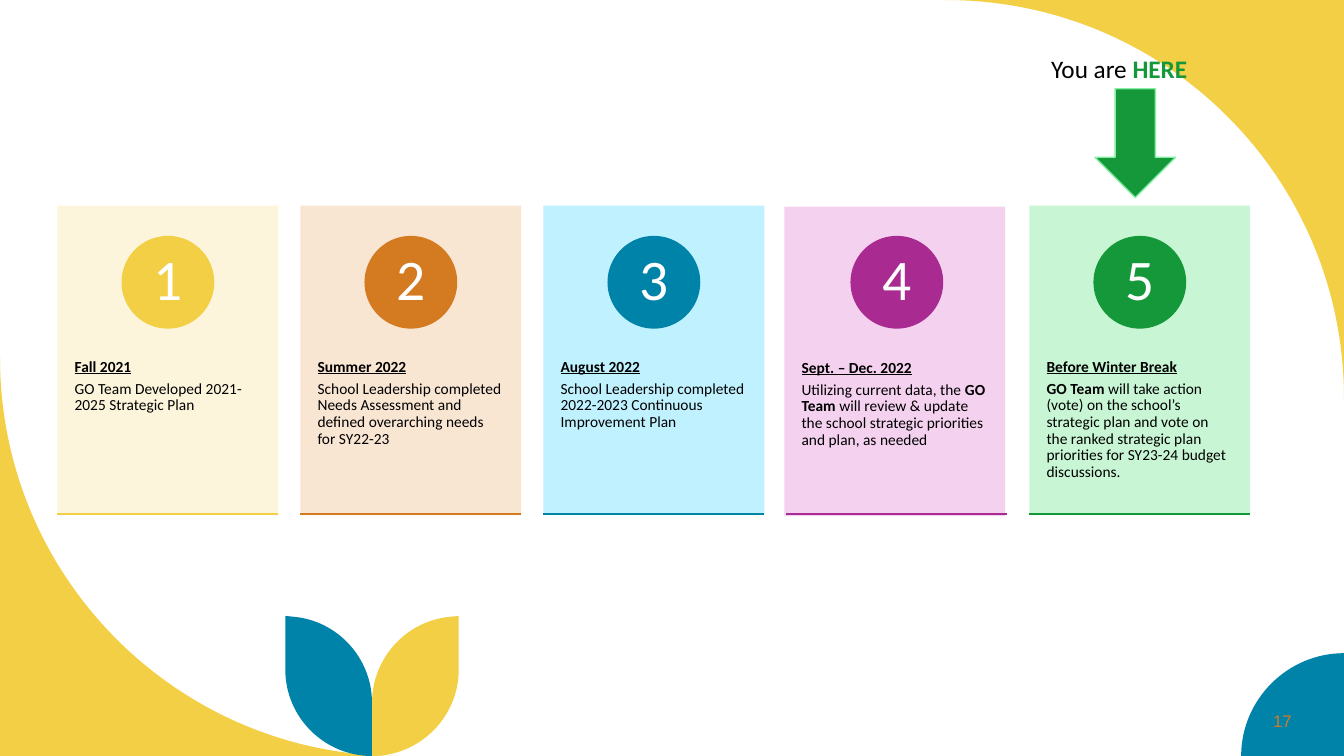
import pptx
import pptx.dml.color
import pptx.enum.shapes
import pptx.enum.text
import pptx.oxml
import pptx.oxml.ns
import pptx.util

Inches, Pt = pptx.util.Inches, pptx.util.Pt
SHAPE = pptx.enum.shapes.MSO_SHAPE
ALIGN = pptx.enum.text.PP_ALIGN
ANCHOR = pptx.enum.text.MSO_ANCHOR
AUTO_SIZE = pptx.enum.text.MSO_AUTO_SIZE
qn, nsdecls = pptx.oxml.ns.qn, pptx.oxml.ns.nsdecls

# Content: date, [(text, bold)], panel, circle and rule colours, panel shift
STEPS = [
    ("Fall 2021", [("GO Team Developed 2021-2025 Strategic Plan", False)],
     "FCF5D8", "F3CF45", "F3CF45", (0, 0)),
    ("Summer 2022",
     [("School Leadership completed Needs Assessment and defined overarching needs for SY22-23", False)],
     "F8E4CF", "D47B22", "D47B22", (0, 0)),
    ("August 2022",
     [("School Leadership completed 2022-2023 Continuous Improvement Plan", False)],
     "BAF0FF", "0083A9", "0083A9", (0, 0)),
    ("Sept. – Dec. 2022",
     [("Utilizing current data, the ", False), ("GO Team ", True),
      ("will review & update the school strategic priorities and plan, as needed", False)],
     "F3CDED", "A92A91", "A92A91", (-0.02, 0.01)),
    ("Before Winter Break",
     [("GO Team ", True),
      ("will take action (vote) on the school’s strategic plan and vote on the ranked "
       "strategic plan priorities for SY23-24 budget discussions.", False)],
     "C3F6D1", "159839", "129836", (0, 0)),
]
YELLOW, BLUE, GREEN = "F3CF45", "0083A9", "159839"
PAGE_NUMBER = "17"

# Layout
W, H = 13.33, 7.5
CARD_X, CARD_Y, CARD_W, CARD_H, PITCH = 0.57, 2.04, 2.19, 3.07, 2.41
TEXT_Y, TEXT_H = 3.2, 1.84
CIRCLE_Y, CIRCLE_D = 2.34, 0.92
RULE_Y = 5.1
STEM_X = 3.69

# Outlines: a 2-tuple is a line end, a 6-tuple is a cubic curve
CORNERS = [
    ([(W, 0), (W, 3.95), (W, 1.77, 11.57, 0, 9.38, 0)], YELLOW),
    ([(0, 3.55), (0, 5.73, 1.77, H, 3.95, H), (0, H)], YELLOW),
    ([(W, H), (W, 6.48), (12.77, 6.48, 12.31, 6.94, 12.31, H)], BLUE),
]
# Leaf outline, with x measured from the stem
LEAF = [(0.86, 6.11), (0.86, 6.64), (0.86, 7.12, 0.47, H, 0, H), (0, 6.97),
        (0, 6.53, 0.34, 6.16, 0.77, 6.12)]


def rgb(value):
    return pptx.dml.color.RGBColor.from_string(value)


def paint(sp, fill, line=None):
    sp.shadow.inherit = False
    sp.fill.solid()
    sp.fill.fore_color.rgb = rgb(fill)
    if line:
        sp.line.color.rgb = rgb(line)
        sp.line.width = Pt(1)
    else:
        sp.line.fill.background()


def add_shape(s, kind, x, y, w, h, fill, line=None):
    sp = s.shapes.add_shape(kind, Inches(x), Inches(y), Inches(w), Inches(h))
    paint(sp, fill, line)
    return sp


def add_text(s, x, y, w, h):
    tf = s.shapes.add_textbox(Inches(x), Inches(y), Inches(w), Inches(h)).text_frame
    tf.word_wrap = True
    tf.auto_size = AUTO_SIZE.NONE
    return tf


def set_margins(tf, side, top):
    tf.margin_left = tf.margin_right = Inches(side)
    tf.margin_top = tf.margin_bottom = Inches(top)


def add_run(p, text, size, color="000000", bold=False, underline=False, font="Calibri"):
    r = p.add_run()
    r.text = text
    r.font.name, r.font.size = font, Pt(size)
    r.font.bold, r.font.underline = bold, underline
    r.font.color.rgb = rgb(color)


def add_outline(s, outline, fill):
    points = [(Inches(part[i]), Inches(part[i + 1]))
              for part in outline for i in range(0, len(part), 2)]
    builder = s.shapes.build_freeform(*points[0])
    builder.add_line_segments(points[1:], close=True)
    sp = builder.convert_to_shape()
    paint(sp, fill)

    # Join each curve's three segments into one cubic
    segments = iter(sp._element.findall(".//" + qn("a:lnTo")))
    for part in outline[1:]:
        group = [next(segments) for _ in range(len(part) // 2)]
        if len(group) == 3:
            curve = pptx.oxml.parse_xml("<a:cubicBezTo %s/>" % nsdecls("a"))
            group[0].addprevious(curve)
            for segment in group:
                curve.append(segment[0])
                segment.getparent().remove(segment)


def mirror(outline, sign):
    return [tuple(STEM_X + sign * v if i % 2 == 0 else v for i, v in enumerate(part))
            for part in outline]


def add_card(s, index, step):
    date, body, panel_color, circle_color, rule_color, (dx, dy) = step
    x = CARD_X + index * PITCH

    # Tinted panel
    panel = add_shape(s, SHAPE.RECTANGLE, x + dx, CARD_Y + dy, CARD_W, CARD_H, panel_color)
    color = panel._element.spPr.find(qn("a:solidFill")).find(qn("a:srgbClr"))
    color.append(pptx.oxml.parse_xml('<a:alpha %s val="90000"/>' % nsdecls("a")))

    # Date and description
    tf = add_text(s, x + dx, TEXT_Y + dy, CARD_W, TEXT_H)
    set_margins(tf, 0.17, 0.36)
    p = tf.paragraphs[0]
    p.line_spacing = 0.9
    add_run(p, date, 11, bold=True, underline=True)
    p = tf.add_paragraph()
    p.line_spacing, p.space_before = 0.9, Pt(3.9)
    for text, bold in body:
        add_run(p, text, 11, bold=bold)

    # Numbered circle
    circle = add_shape(s, SHAPE.OVAL, x + (CARD_W - CIRCLE_D) / 2, CIRCLE_Y,
                       CIRCLE_D, CIRCLE_D, circle_color)
    tf = circle.text_frame
    set_margins(tf, 0.07, 0.01)
    tf.vertical_anchor = ANCHOR.MIDDLE
    p = tf.paragraphs[0]
    p.alignment, p.line_spacing = ALIGN.CENTER, 0.9
    add_run(p, str(index + 1), 41, "FFFFFF")

    # Bottom rule
    rule = s.shapes.add_connector(pptx.enum.shapes.MSO_CONNECTOR.STRAIGHT, Inches(x),
                                  Inches(RULE_Y), Inches(x + CARD_W), Inches(RULE_Y))
    rule.line.color.rgb = rgb(rule_color)
    rule.line.width = Pt(1)
    rule._element.spPr.append(pptx.oxml.parse_xml("<a:effectLst %s/>" % nsdecls("a")))


def main():
    prs = pptx.Presentation()
    prs.slide_width, prs.slide_height = Inches(W), Inches(H)
    s = prs.slides.add_slide(prs.slide_layouts[6])

    # Background decoration
    for outline, fill in CORNERS:
        add_outline(s, outline, fill)
    for sign, fill in ((1, YELLOW), (-1, BLUE)):
        add_outline(s, mirror(LEAF, sign), fill)

    # Page number
    tf = add_text(s, 11.1, 6.95, 1.81, 0.4)
    tf.vertical_anchor = ANCHOR.MIDDLE
    tf.paragraphs[0].alignment = ALIGN.RIGHT
    add_run(tf.paragraphs[0], PAGE_NUMBER, 12, "D47B22", font="Arial")

    # Timeline cards
    for index, step in enumerate(STEPS):
        add_card(s, index, step)

    # Current position marker
    add_shape(s, SHAPE.DOWN_ARROW, 10.86, 0.88, 0.8, 1.08, GREEN, "86EFA3")
    p = add_text(s, 9.69, 0.48, 2.82, 0.4).paragraphs[0]
    p.alignment = ALIGN.CENTER
    add_run(p, "You are ", 18)
    add_run(p, "HERE", 18, GREEN, bold=True)

    prs.save("out.pptx")


if __name__ == "__main__":
    main()
